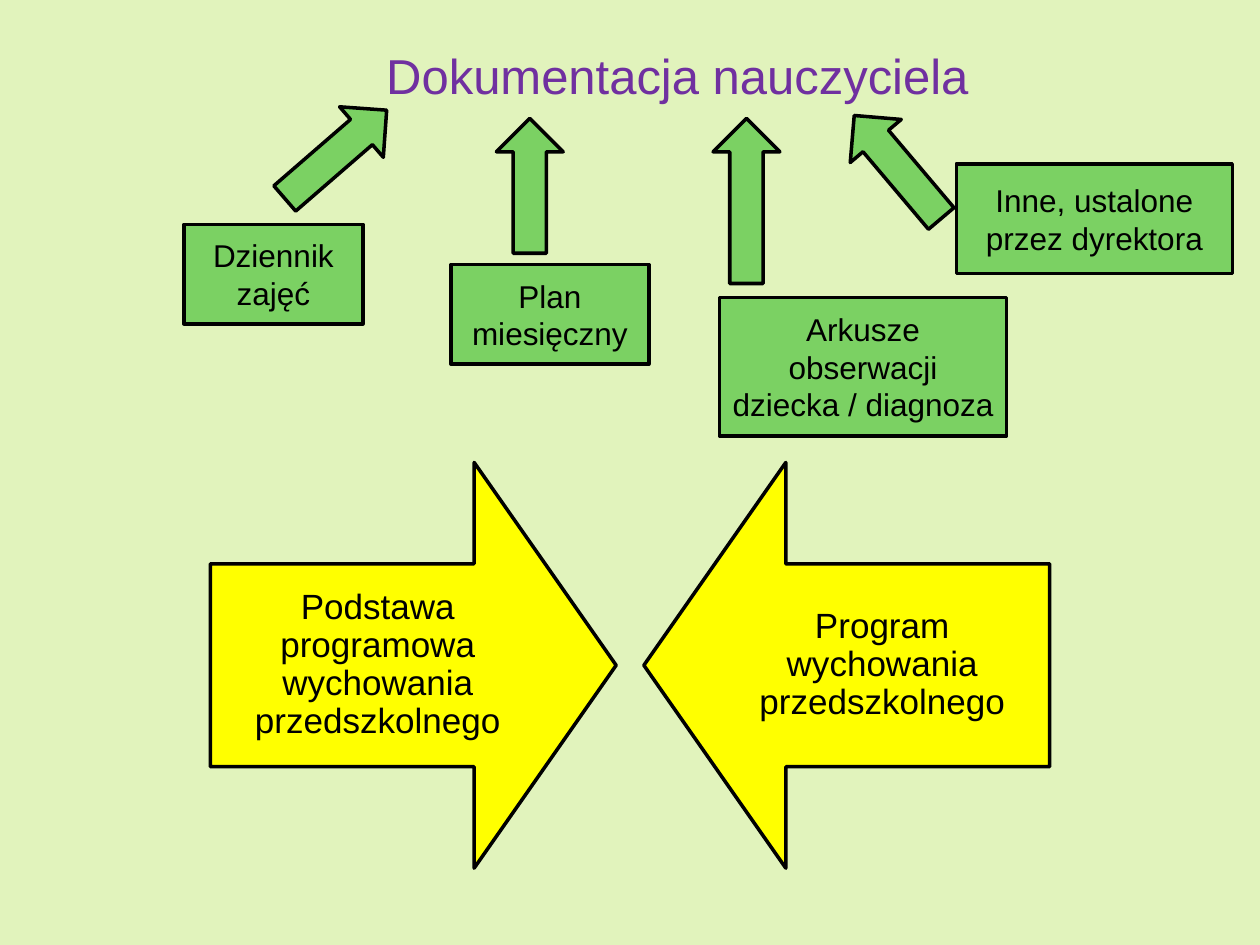
from pptx import Presentation
from pptx.dml.color import RGBColor as RGB
from pptx.enum.shapes import MSO_SHAPE as Kind
from pptx.enum.text import MSO_ANCHOR as Anchor, PP_ALIGN as Align
from pptx.util import Inches, Pt

HUES = {"back": "E1F3BC", "title": "7030A0", "green": "7BD163",
        "yellow": "FFFF00", "ink": "000000"}
COLS, ROWS = 100, 75  # grid cells of a tenth of an inch

deck = Presentation()
deck.slide_width, deck.slide_height = Inches(10), Inches(7.5)
cell_w, cell_h = deck.slide_width / COLS, deck.slide_height / ROWS
slide = deck.slides.add_slide(deck.slide_layouts[5])
slide.background.fill.solid()
slide.background.fill.fore_color.rgb = RGB.from_string(HUES["back"])


def write(shape, text, size, hue):
    frame = shape.text_frame
    frame.word_wrap = True
    frame.text = text
    para = frame.paragraphs[0]
    para.alignment = Align.CENTER
    para.font.name, para.font.size = "Arial", Pt(size)
    para.font.color.rgb = RGB.from_string(HUES[hue])
    return frame, para


def draw(kind, col, row, wide, high, hue, turn=0):
    shape = slide.shapes.add_shape(
        kind, round(col * cell_w), round(row * cell_h),
        round(wide * cell_w), round(high * cell_h))
    shape.shadow.inherit = False
    shape.rotation = turn
    shape.fill.solid()
    shape.fill.fore_color.rgb = RGB.from_string(HUES[hue])
    shape.line.color.rgb = RGB.from_string(HUES["ink"])
    shape.line.width = Pt(2)
    return shape


# Title
title = slide.shapes.title
title.left, title.top = round(12.5 * cell_w), round(3.2 * cell_h)
title.width, title.height = round(82.5 * cell_w), round(5.5 * cell_h)
frame, para = write(title, "Dokumentacja nauczyciela", 28, "title")
frame.vertical_anchor = Anchor.MIDDLE

# Big arrows that meet in the middle
SIDE = 32.2
for kind, col, text in [
    (Kind.RIGHT_ARROW, 16.7, "Podstawa programowa wychowania przedszkolnego"),
    (Kind.LEFT_ARROW, COLS - 16.7 - SIDE, "Program wychowania przedszkolnego"),
]:
    arrow = draw(kind, col, 36.7, SIDE, SIDE, "yellow")
    arrow.adjustments[0], arrow.adjustments[1] = 0.5, 0.35
    frame, para = write(arrow, text, 20, "ink")
    frame.vertical_anchor = Anchor.MIDDLE
    frame.margin_left = frame.margin_right = Inches(0.16)
    frame.margin_top = frame.margin_bottom = Inches(0.16)
    para.line_spacing = 0.9

# Document boxes
for text, col, row, wide, high in [
    ("Dziennik zajęć", 14.6, 17.8, 14.2, 7.9),
    ("Plan miesięczny", 35.8, 21, 15.7, 7.9),
    ("Arkusze obserwacji dziecka / diagnoza", 57.1, 23.6, 22.8, 11),
    ("Inne, ustalone przez dyrektora", 75.9, 13, 21.9, 8.7),
]:
    box = draw(Kind.RECTANGLE, col, row, wide, high, "green")
    frame, para = write(box, text, 18, "ink")
    frame.vertical_anchor = Anchor.MIDDLE

# Small arrows from the boxes up to the title
for col, row, wide, turn in [
    (21.3, 9.6, 10.7, 319.1),
    (36.7, 12.1, 10.7, 270),
    (52.7, 13.3, 13.1, 270),
    (65.9, 10.6, 10.7, 229.8),
]:
    draw(Kind.RIGHT_ARROW, col, row, wide, 5.3, "green", turn)

deck.save("out.pptx")
